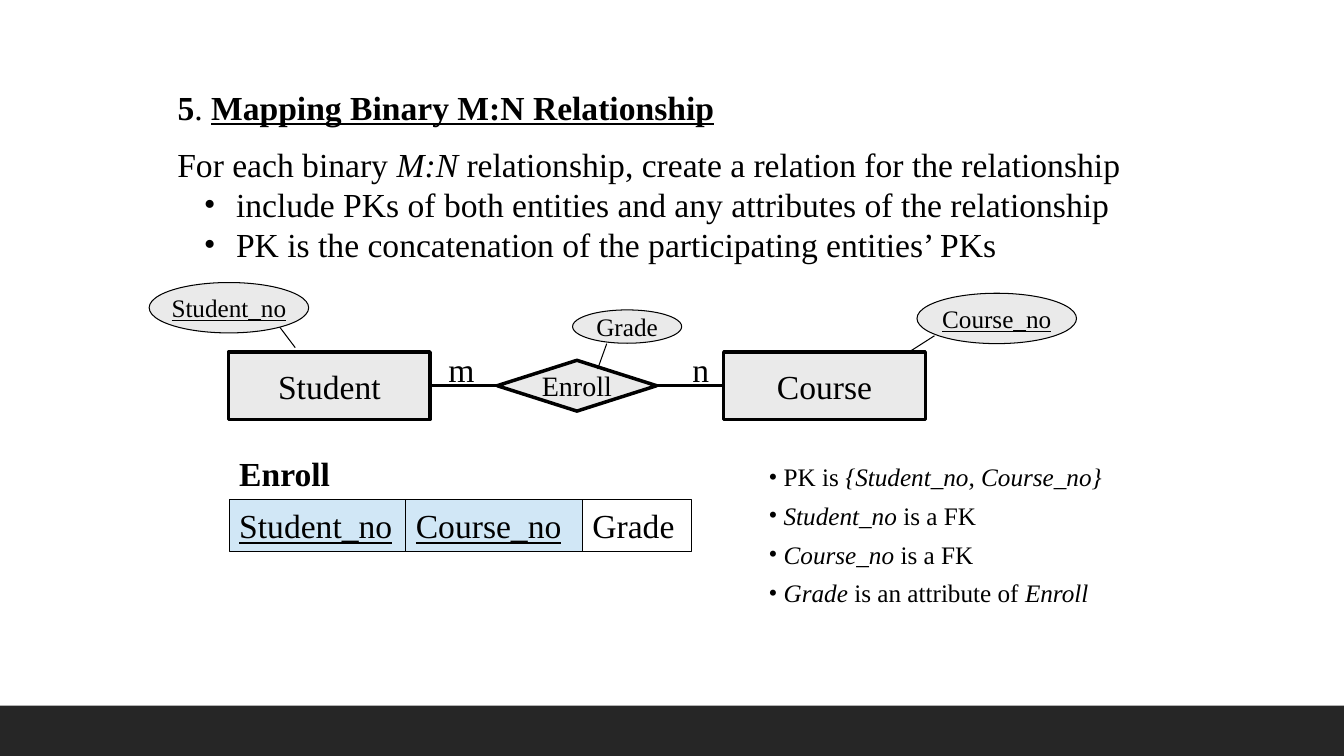
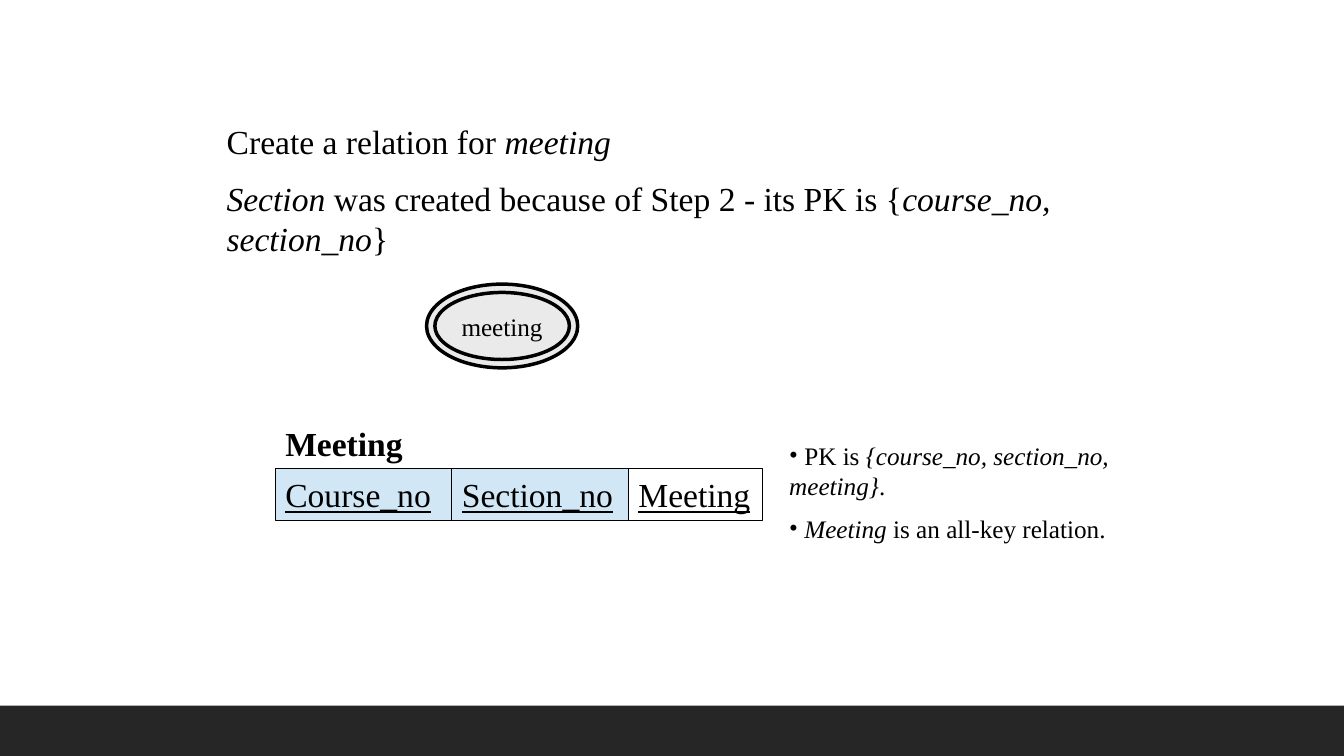
from dataclasses import dataclass

from lxml import etree
from pptx import Presentation
from pptx.dml.color import RGBColor
from pptx.enum.shapes import MSO_CONNECTOR, MSO_SHAPE
from pptx.enum.text import MSO_ANCHOR, MSO_AUTO_SIZE, PP_ALIGN
from pptx.oxml.ns import qn
from pptx.util import Cm, Pt

RECT, OVAL, DIAMOND = MSO_SHAPE.RECTANGLE, MSO_SHAPE.OVAL, MSO_SHAPE.DIAMOND
STRAIGHT = MSO_CONNECTOR.STRAIGHT
LEFT, CENTER = PP_ALIGN.LEFT, PP_ALIGN.CENTER
TOP, MIDDLE = MSO_ANCHOR.TOP, MSO_ANCHOR.MIDDLE
NO_AUTOFIT = MSO_AUTO_SIZE.NONE
SITE_LEFT, SITE_RIGHT = 1, 3
TITLE_ONLY = 5


@dataclass(frozen=True)
class Theme:
    font: str = "Times New Roman"
    ink: RGBColor = RGBColor(0x00, 0x00, 0x00)
    node: RGBColor = RGBColor(0xEA, 0xEA, 0xEA)
    key: RGBColor = RGBColor(0xD1, 0xE7, 0xF6)
    band: RGBColor = RGBColor(0x26, 0x26, 0x26)
    body: int = 24
    medium: int = 20
    small: int = 18
    thick: float = 2.5
    thin: float = 0.75


THEME = Theme()


def cms(*lengths):
    return [Cm(v) for v in lengths]


def set_bullet(p, left=0, hang=0):
    pPr = p._p.get_or_add_pPr()
    pPr.set("marL", str(Cm(left)))
    pPr.set("indent", str(-Cm(hang)))
    bullet = etree.Element(qn("a:buChar"), char="•")
    font = etree.Element(qn("a:buFont"), typeface=THEME.font)
    defaults = pPr.find(qn("a:defRPr"))
    defaults.addprevious(font)
    defaults.addprevious(bullet)


def write(p, runs, size=THEME.body, align=LEFT):
    """Fill a paragraph from (text, style) pairs; style holds any of b, i, u."""
    p.alignment = align
    p.font.name, p.font.size = THEME.font, Pt(size)
    p.font.color.rgb = THEME.ink
    for text, style in runs:
        r = p.add_run()
        r.text = text
        if "b" in style:
            r.font.bold = True
        if "i" in style:
            r.font.italic = True
        if "u" in style:
            r.font.underline = True


def add_text(slide, box, paragraphs, size=THEME.body, gap=0):
    """Add a text box and return its paragraphs."""
    tf = slide.shapes.add_textbox(*cms(*box)).text_frame
    tf.word_wrap = True
    for i, runs in enumerate(paragraphs):
        p = tf.add_paragraph() if i else tf.paragraphs[0]
        write(p, runs, size)
        if i and gap:
            p.space_before = Pt(gap)
    return tf.paragraphs


def add_notes(slide, box, paragraphs, gap):
    for p in add_text(slide, box, paragraphs, THEME.small, gap):
        set_bullet(p)


def add_title(slide, box, runs):
    title = slide.shapes.title
    title.left, title.top, title.width, title.height = cms(*box)
    tf = title.text_frame
    tf.auto_size, tf.word_wrap, tf.vertical_anchor = NO_AUTOFIT, True, TOP
    write(tf.paragraphs[0], runs)


def add_node(slide, kind, box, text="", size=THEME.body, line=THEME.thick,
             style="", fill=THEME.node, align=CENTER):
    """Add an outlined shape with one line of text."""
    sp = slide.shapes.add_shape(kind, *cms(*box))
    sp.shadow.inherit = False
    if fill is None:
        sp.fill.background()
    else:
        sp.fill.solid()
        sp.fill.fore_color.rgb = fill
    sp.line.color.rgb, sp.line.width = THEME.ink, Pt(line)
    if text:
        tf = sp.text_frame
        tf.word_wrap, tf.vertical_anchor = align == LEFT, MIDDLE
        write(tf.paragraphs[0], [(text, style)], size, align)
    return sp


def add_line(slide, start=(0, 0), end=(0, 0), width=THEME.thin):
    line = slide.shapes.add_connector(STRAIGHT, *cms(*start, *end))
    line.line.color.rgb, line.line.width = THEME.ink, Pt(width)
    etree.SubElement(line._element.spPr, qn("a:effectLst"))
    return line


def join(slide, left, right):
    line = add_line(slide, width=THEME.thick)
    line.begin_connect(left, SITE_RIGHT)
    line.end_connect(right, SITE_LEFT)


def add_attribute(slide, box, text, start, end, style=""):
    """Add an attribute oval with the line to its owner."""
    add_line(slide, start, end)
    add_node(slide, OVAL, box, text, THEME.small, THEME.thin, style)


def add_relation(slide, left, top, name, attributes):
    """Add a relation schema; attributes are (text, width, style, fill)."""
    add_text(slide, (left, top - 1.29, 5.5, 1.27), [[(name, "b")]])
    for text, width, style, fill in attributes:
        add_node(slide, RECT, (left, top, width, 1.3), text, line=THEME.thin,
                 style=style, fill=fill, align=LEFT)
        left += width


def add_band(prs, slide, layout):
    """Put the dark bottom band on the layout that all slides share."""
    height = Cm(1.27)
    sp = slide.shapes.add_shape(RECT, 0, prs.slide_height - height, prs.slide_width, height)
    sp.shadow.inherit = False
    sp.fill.solid()
    sp.fill.fore_color.rgb = THEME.band
    sp.line.fill.background()
    layout.shapes.element.insert(2, sp._element)


def build_mapping(slide):
    add_title(slide, (4.22, 2.06, 24.41, 1.27),
              [("5", "b"), (". ", ""), ("Mapping Binary M:N Relationship", "bu")])
    body = add_text(slide, (4.22, 3.49, 24.41, 3.4), [
        [("For each binary ", ""), ("M:N", "i"),
         (" relationship, create a relation for the relationship", "")],
        [("include PKs of both entities and any attributes of the relationship", "")],
        [("PK is the concatenation of the participating entities’ PKs", "")],
    ])
    for p in body[1:]:
        set_bullet(p, 1.48, 0.81)

    student = add_node(slide, RECT, (5.76, 8.87, 5.08, 1.7), "Student")
    course = add_node(slide, RECT, (18.24, 8.87, 5.08, 1.7), "Course")
    join(slide, student, course)
    add_node(slide, DIAMOND, (12.53, 9.08, 4.02, 1.28), "Enroll", THEME.medium)
    for left, label in ((11.05, "m"), (17.2, "n")):
        add_text(slide, (left, 8.66, 1.27, 1.27), [[(label, "")]])

    add_attribute(slide, (14.43, 7.81, 2.75, 0.84), "Grade", (15.29, 8.66), (15.06, 9.3))
    add_attribute(slide, (23.11, 7.39, 4.02, 1.27), "Course_no",
                  (23.55, 8.46), (22.91, 8.87), "u")
    add_attribute(slide, (3.76, 7.12, 4.02, 1.27), "Student_no",
                  (7.04, 8.23), (7.44, 8.76), "u")

    add_relation(slide, 5.78, 12.59, "Enroll", [
        ("Student_no", 4.45, "u", THEME.key),
        ("Course_no", 4.45, "u", THEME.key),
        ("Grade", 2.75, "", None),
    ])
    add_notes(slide, (19.12, 11.51, 9.02, 3.99), [
        [(" PK is ", ""), ("{Student_no, Course_no}", "i")],
        [(" Student_no", "i"), (" is a FK", "")],
        [(" Course_no", "i"), (" is a FK", "")],
        [(" Grade", "i"), (" is an attribute of ", ""), ("Enroll", "i")],
    ], gap=6)


def build_meeting(slide):
    add_title(slide, (5.46, 2.92, 22.43, 1.27),
              [("Create a relation for ", ""), ("meeting", "i")])
    add_text(slide, (5.46, 4.36, 22.43, 2.3), [
        [("Section", "i"), (" was created because of Step 2 - its PK is {", ""),
         ("course_no, section_no", "i"), ("}", "")],
    ])

    left, top, width, height, inset = 10.75, 7.16, 3.81, 2.11, 0.21
    add_node(slide, OVAL, (left, top, width, height))
    add_node(slide, OVAL, (left + inset, top + inset, width - 2 * inset, height - 2 * inset),
             "meeting", THEME.small)

    add_relation(slide, 6.94, 11.81, "Meeting", [
        ("Course_no", 4.45, "u", THEME.key),
        ("Section_no", 4.45, "u", THEME.key),
        ("Meeting", 3.38, "u", None),
    ])
    add_notes(slide, (19.64, 10.97, 8.69, 2.92), [
        [(" PK is ", ""), ("{course_no, section_no, meeting}", "i"), (".", "")],
        [(" Meeting", "i"), (" is an all-key relation.", "")],
    ], gap=9)


def main():
    prs = Presentation()
    prs.slide_width, prs.slide_height = cms(33.87, 19.05)
    layout = prs.slide_layouts[TITLE_ONLY]
    slides = [prs.slides.add_slide(layout) for _ in range(2)]
    add_band(prs, slides[0], layout)
    build_mapping(slides[0])
    build_meeting(slides[1])
    prs.save("out.pptx")


if __name__ == "__main__":
    main()
